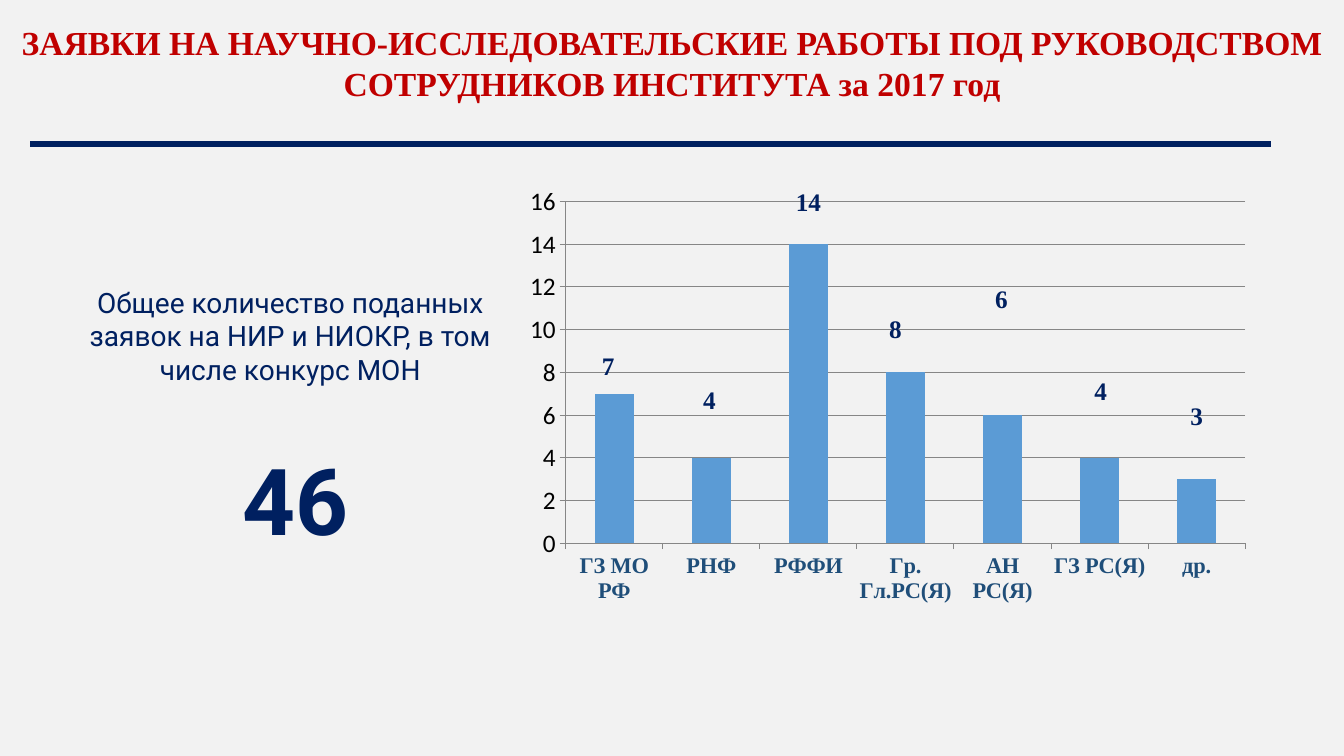
from lxml import etree
from pptx import Presentation
from pptx.chart.data import CategoryChartData
from pptx.dml.color import RGBColor
from pptx.enum.chart import XL_CHART_TYPE as ChartType, XL_TICK_MARK as Tick
from pptx.enum.shapes import MSO_CONNECTOR as Connector
from pptx.enum.text import MSO_ANCHOR as Anchor, MSO_AUTO_SIZE as AutoSize, PP_ALIGN as Align
from pptx.oxml.ns import qn
from pptx.util import Inches, Pt

TITLE = ("ЗАЯВКИ НА НАУЧНО-ИССЛЕДОВАТЕЛЬСКИЕ РАБОТЫ ПОД РУКОВОДСТВОМ "
         "СОТРУДНИКОВ ИНСТИТУТА за 2017 год")
CAPTION = "Общее количество поданных заявок на НИР и НИОКР, в том числе конкурс МОН"
TOTAL = "46"
# category, applications, label shift from the bar centre in inches (x, y)
APPLICATIONS = [
    ("ГЗ МО РФ", 7, -0.06, -1.01),
    ("РНФ", 4, -0.02, -0.99),
    ("РФФИ", 14, 0, -1.89),
    ("Гр. Гл.РС(Я)", 8, -0.1, -1.27),
    ("АН РС(Я)", 6, -0.01, -1.78),
    ("ГЗ РС(Я)", 4, 0.01, -1.08),
    ("др.", 3, 0, -0.93),
]
CHART_BOX = (0.27, 1.56, 12.42, 5.06)
PLOT_BOX = {"x": 5.34, "y": 0.44, "w": 6.74, "h": 3.39}  # inches inside the chart

BACKGROUND = RGBColor(0xF2, 0xF2, 0xF2)
RED = RGBColor(0xC0, 0x00, 0x00)
NAVY = RGBColor(0x00, 0x20, 0x60)
BLUE = RGBColor(0x5B, 0x9B, 0xD5)
DARK_BLUE = RGBColor(0x1F, 0x4E, 0x79)
GRAY = RGBColor(0x86, 0x86, 0x86)
BLACK = RGBColor(0, 0, 0)
SERIF, SANS = "Times New Roman", "Roboto"


def set_font(font, name, size, color, bold=False):
    font.name, font.size, font.bold = name, Pt(size), bold
    font.color.rgb = color


def write(sp, text, name, size, color, bold=False, align=Align.CENTER, anchor=Anchor.TOP):
    tf = sp.text_frame
    tf.text = text
    tf.word_wrap, tf.auto_size, tf.vertical_anchor = True, AutoSize.NONE, anchor
    p = tf.paragraphs[0]
    p.alignment = align
    set_font(p.runs[0].font, name, size, color, bold)


def make_layout(lengths, **modes):
    """Return a c:layout element; lengths in inches become shares of the chart."""
    width, height = CHART_BOX[2:]
    layout = etree.Element(qn("c:layout"))
    manual = etree.SubElement(layout, qn("c:manualLayout"))
    for tag, mode in modes.items():
        etree.SubElement(manual, qn("c:" + tag)).set("val", mode)
    for tag, length in lengths.items():
        share = length / (width if tag in "xw" else height)
        etree.SubElement(manual, qn("c:" + tag)).set("val", f"{share:.4f}")
    return layout


def add_applications_chart(slide):
    data = CategoryChartData()
    data.categories = [row[0] for row in APPLICATIONS]
    data.add_series("Series 1", [row[1] for row in APPLICATIONS])
    chart = slide.shapes.add_chart(
        ChartType.COLUMN_STACKED, *map(Inches, CHART_BOX), data).chart
    chart.has_legend = chart.has_title = False
    set_font(chart.font, "Calibri", 18, BLACK)

    values, cats = chart.value_axis, chart.category_axis
    values.minimum_scale, values.maximum_scale, values.major_unit = 0, 16, 2
    values.has_major_gridlines = True
    set_font(cats.tick_labels.font, SERIF, 16, DARK_BLUE, True)
    for axis in (values, cats):
        axis.major_tick_mark = Tick.OUTSIDE
    for fmt in (values.format, cats.format, values.major_gridlines.format):
        fmt.line.color.rgb = GRAY
        fmt.line.width = Pt(0.75)

    plot = chart.plots[0]
    plot.gap_width, plot.overlap, plot.vary_by_categories = 150, 100, False
    series = plot.series[0]
    series.format.fill.solid()
    series.format.fill.fore_color.rgb = BLUE
    for i in range(len(APPLICATIONS)):
        set_font(series.points[i].data_label.font, SERIF, 18, NAVY, True)
    labels = chart.element.iter(qn("c:dLbl"))
    for label, (_, _, dx, dy) in zip(labels, APPLICATIONS):
        label.find(qn("c:idx")).addnext(make_layout({"x": dx, "y": dy}))
    for leader_lines in chart.element.iter(qn("c:showLeaderLines")):
        leader_lines.set("val", "0")

    area = next(chart.element.iter(qn("c:plotArea")))
    for layout in area.findall(qn("c:layout")):
        area.remove(layout)
    area.insert(0, make_layout(PLOT_BOX, layoutTarget="inner", xMode="edge", yMode="edge"))


def main():
    prs = Presentation()
    prs.slide_width, prs.slide_height = Inches(13.33), Inches(7.5)
    slide = prs.slides.add_slide(prs.slide_layouts[5])
    slide.background.fill.solid()
    slide.background.fill.fore_color.rgb = BACKGROUND

    title = slide.shapes.title
    title.left, title.top = Inches(0), Inches(0.17)
    title.width, title.height = prs.slide_width, Inches(0.91)
    write(title, TITLE, SERIF, 24, RED, True)

    caption = slide.shapes.add_textbox(*map(Inches, (0.76, 2.43, 4.24, 1.45)))
    write(caption, CAPTION, SANS, 20, NAVY, anchor=Anchor.BOTTOM)
    total = slide.shapes.add_textbox(*map(Inches, (2.31, 4.35, 1.3, 1.21)))
    write(total, TOTAL, SANS, 66, NAVY, True, Align.LEFT)

    rule = slide.shapes.add_connector(
        Connector.STRAIGHT, *map(Inches, (0.3, 1.43, 12.61, 1.43)))
    rule.line.color.rgb, rule.line.width = NAVY, Pt(4.5)
    etree.SubElement(rule.element.spPr, qn("a:effectLst"))

    add_applications_chart(slide)
    prs.save("out.pptx")


if __name__ == "__main__":
    main()
